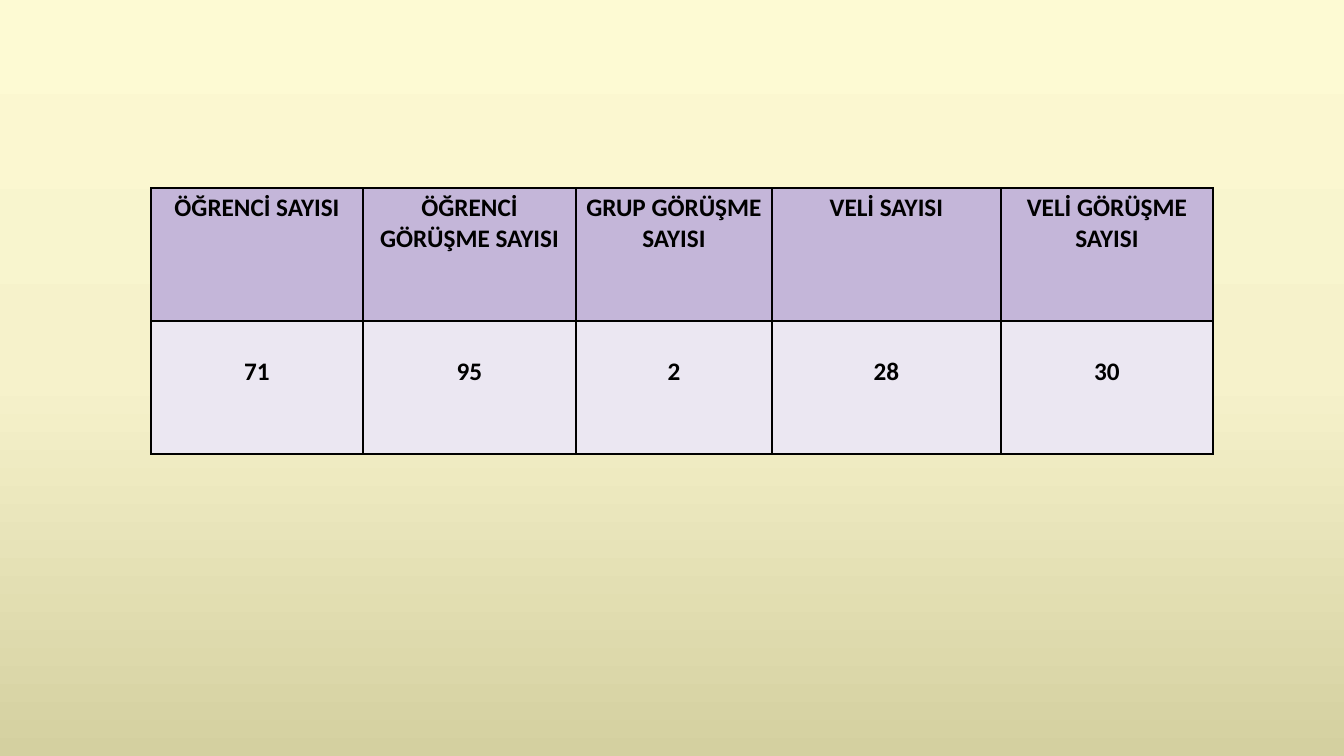
from copy import deepcopy

from lxml.etree import SubElement
from pptx import Presentation
from pptx.dml.color import RGBColor
from pptx.enum.text import MSO_ANCHOR, PP_ALIGN
from pptx.oxml.ns import qn
from pptx.util import Pt

PX = 914400 / 100.8
BLACK = RGBColor(0x00, 0x00, 0x00)
LILAC = RGBColor(0xC4, 0xB6, 0xD9)
PALE_LILAC = RGBColor(0xEB, 0xE7, 0xF2)
BACKGROUND_STOPS = [
    (0, RGBColor(0xFD, 0xFA, 0xD3)),
    (0.5, RGBColor(0xF6, 0xF2, 0xCB)),
    (1, RGBColor(0xD4, 0xD0, 0xA0)),
]

HEADINGS = ["ÖĞRENCİ SAYISI", "ÖĞRENCİ GÖRÜŞME SAYISI", "GRUP GÖRÜŞME SAYISI",
            "VELİ SAYISI", "VELİ GÖRÜŞME SAYISI"]
COUNTS = ["71", "95", "2", "28", "30"]
COLUMN_WIDTHS = [212, 213, 196, 229, 212]
# Texts, fill and top margin of each row
ROWS = [(HEADINGS, LILAC, 5), (COUNTS, PALE_LILAC, 36)]
FONT = {"name": "Calibri", "size": Pt(18), "bold": True}


def px(length):
    return round(length * PX)


def paint_background(slide):
    fill = slide.background.fill
    fill.gradient()
    fill.gradient_angle = 270
    stop_list = slide.element.find(".//" + qn("a:gsLst"))
    stop_list.append(deepcopy(stop_list[0]))
    for stop, (position, color) in zip(fill.gradient_stops, BACKGROUND_STOPS):
        stop.position = position
        stop.color.rgb = color


def add_borders(cell):
    properties = cell._tc.get_or_add_tcPr()
    for index, side in enumerate(("lnL", "lnR", "lnT", "lnB")):
        line = SubElement(properties, qn(f"a:{side}"), w=str(Pt(1)))
        solid = SubElement(line, qn("a:solidFill"))
        SubElement(solid, qn("a:srgbClr"), val=str(BLACK))
        properties.insert(index, line)


def format_cell(cell, text, color, top_margin):
    layout = {"margin_left": px(7), "margin_right": px(7),
              "margin_top": px(top_margin), "margin_bottom": px(5),
              "vertical_anchor": MSO_ANCHOR.TOP}
    for name, value in layout.items():
        setattr(cell, name, value)
    cell.fill.solid()
    cell.fill.fore_color.rgb = color
    add_borders(cell)
    paragraph = cell.text_frame.paragraphs[0]
    paragraph.alignment = PP_ALIGN.CENTER
    run = paragraph.add_run()
    run.text = text
    for name, value in FONT.items():
        setattr(run.font, name, value)
    run.font.color.rgb = BLACK


def add_meeting_table(slide, left, top, width, height):
    table = slide.shapes.add_table(len(ROWS), len(HEADINGS), px(left), px(top),
                                   px(width), px(height)).table
    for column, share in zip(table.columns, COLUMN_WIDTHS):
        column.width = px(width * share / sum(COLUMN_WIDTHS))
    for row, (texts, color, top_margin) in zip(table.rows, ROWS):
        row.height = px(height / len(ROWS))
        for cell, text in zip(row.cells, texts):
            format_cell(cell, text, color, top_margin)


def main():
    presentation = Presentation()
    presentation.slide_width = px(1344)
    presentation.slide_height = px(756)
    slide = presentation.slides.add_slide(presentation.slide_layouts[6])
    paint_background(slide)
    add_meeting_table(slide, 151, 188, 1062, 266)
    presentation.save("out.pptx")


if __name__ == "__main__":
    main()
